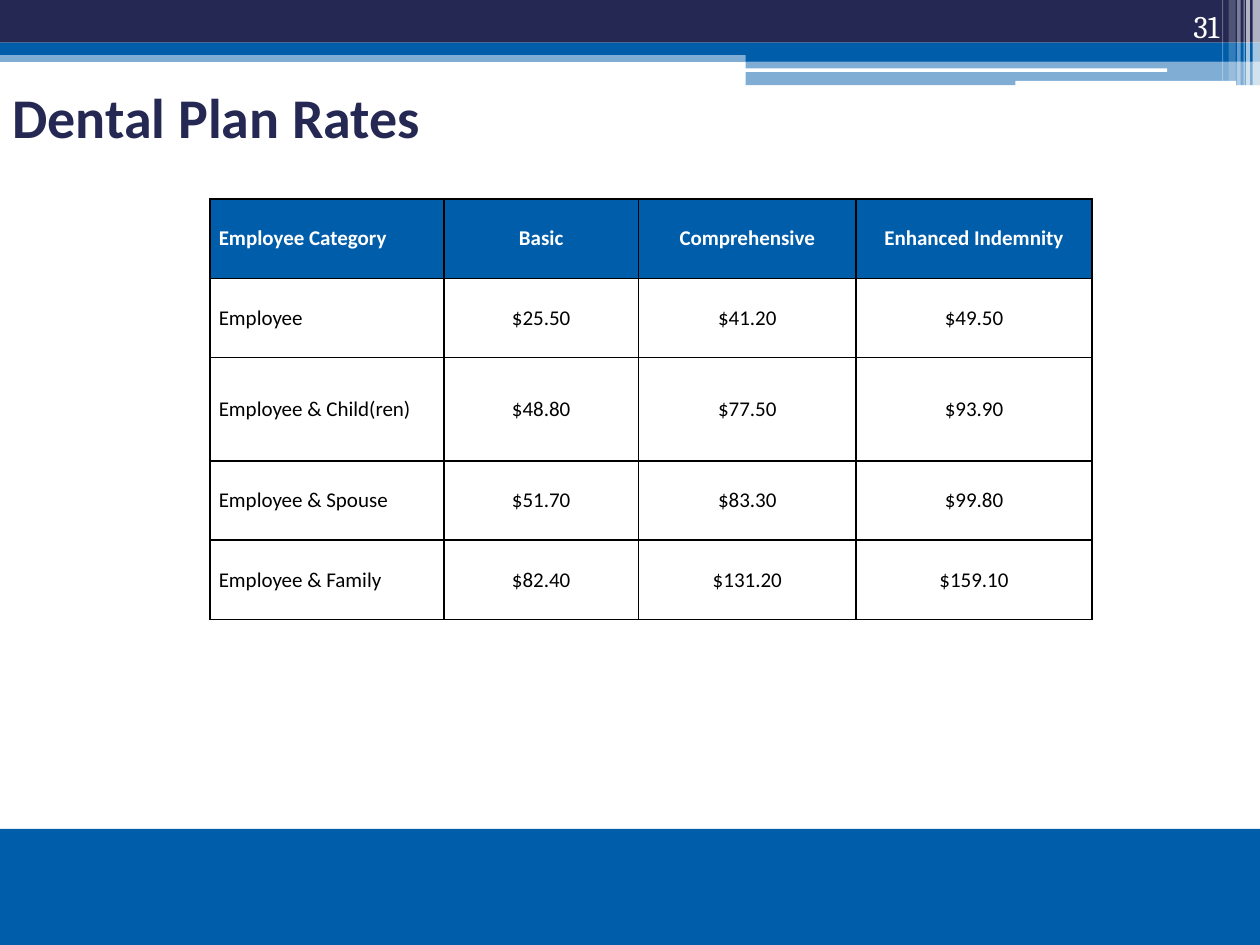
from lxml import etree
from pptx import Presentation
from pptx import util as u
from pptx.dml.color import RGBColor
from pptx.enum import shapes, text
from pptx.oxml import ns

COLORS = {"navy": "242852", "blue": "005DAA", "white": "FFFFFF", "black": "000000"}
RECT = shapes.MSO_SHAPE.RECTANGLE
ROUNDED = shapes.MSO_SHAPE.ROUNDED_RECTANGLE
LEFT, CENTER, RIGHT = text.PP_ALIGN.LEFT, text.PP_ALIGN.CENTER, text.PP_ALIGN.RIGHT
MIDDLE, BOTTOM = text.MSO_ANCHOR.MIDDLE, text.MSO_ANCHOR.BOTTOM


class SlideBuilder:
    """Holds the text style and the current slide; lengths are in centimetres."""

    def __init__(self, slide, font="Calibri"):
        self.slide = slide
        self.font = font

    def color(self, name):
        return RGBColor.from_string(COLORS[name])

    def bar(self, left, top, width, height, color, opacity=100, kind=RECT):
        shape = self.slide.shapes.add_shape(
            kind, u.Cm(left), u.Cm(top), u.Cm(width), u.Cm(height))
        shape.shadow.inherit = False
        shape.line.fill.background()
        shape.fill.solid()
        shape.fill.fore_color.rgb = self.color(color)
        if opacity < 100:
            fill_color = shape.element.spPr.find(".//" + ns.qn("a:srgbClr"))
            etree.SubElement(fill_color, ns.qn("a:alpha"), val=str(opacity * 1000))

    def set_text(self, frame, content, size, color, bold=False, align=LEFT, font=None):
        frame.text = content
        paragraph = frame.paragraphs[0]
        paragraph.alignment = align
        run_font = paragraph.runs[0].font
        run_font.name = font or self.font
        run_font.size = u.Pt(size)
        run_font.bold = bold
        run_font.color.rgb = self.color(color)

    def label(self, left, top, width, height, content, size, color, anchor, **style):
        box = self.slide.shapes.add_textbox(
            u.Cm(left), u.Cm(top), u.Cm(width), u.Cm(height))
        box.text_frame.word_wrap = True
        box.text_frame.vertical_anchor = anchor
        self.set_text(box.text_frame, content, size, color, **style)

    def border(self, cell, color="black", width=1):
        properties = cell._tc.get_or_add_tcPr()
        for side in ("lnL", "lnR", "lnT", "lnB"):
            line = etree.SubElement(properties, ns.qn("a:" + side), w=str(u.Pt(width)))
            fill = etree.SubElement(line, ns.qn("a:solidFill"))
            etree.SubElement(fill, ns.qn("a:srgbClr"), val=COLORS[color])

    def table(self, left, top, widths, heights, rows):
        table = self.slide.shapes.add_table(
            len(rows), len(widths), u.Cm(left), u.Cm(top),
            u.Cm(sum(widths)), u.Cm(sum(heights))).table
        table.horz_banding = False
        for column, width in zip(table.columns, widths):
            column.width = u.Cm(width)
        for row, height in zip(table.rows, heights):
            row.height = u.Cm(height)
        for i, values in enumerate(rows):
            header = i == 0
            for j, value in enumerate(values):
                cell = table.cell(i, j)
                cell.vertical_anchor = MIDDLE
                cell.margin_left = cell.margin_right = u.Cm(0.18)
                cell.margin_top = cell.margin_bottom = 0
                self.border(cell)
                if header:
                    cell.fill.solid()
                    cell.fill.fore_color.rgb = self.color("blue")
                else:
                    cell.fill.background()
                self.set_text(cell.text_frame, value, 12, "white" if header else "black",
                              bold=header, align=CENTER if j else LEFT)


def main():
    presentation = Presentation()
    presentation.slide_width, presentation.slide_height = u.Cm(25.4), u.Cm(19.05)
    builder = SlideBuilder(presentation.slides.add_slide(presentation.slide_layouts[6]))

    # Header bands
    builder.bar(0, 1.02, 25.4, 0.23, "blue", 50)
    builder.bar(0, 0, 25.4, 0.86, "navy")
    builder.bar(0, 0.86, 25.4, 0.25, "blue")
    builder.bar(15.03, 0.99, 10.37, 0.25, "blue")
    builder.bar(15.03, 1.22, 10.37, 0.5, "blue", 50)
    builder.bar(15.02, 1.38, 8.51, 0.07, "white", kind=ROUNDED)
    builder.bar(20.47, 1.63, 4.45, 0.1, "white", kind=ROUNDED)

    # Translucent stripes in the corner: left, width, height, opacity
    stripes = [
        (25.25, 0.15, 1.73, 65), (25.12, 0.08, 1.73, 65), (25.07, 0.02, 1.73, 60),
        (24.94, 0.07, 1.73, 40), (24.77, 0.14, 1.63, 20), (24.64, 0.02, 1.63, 30),
    ]
    for left, width, height, opacity in stripes:
        builder.bar(left, 0, width, height, "white", opacity)

    # Footer band
    builder.bar(0, 16.71, 25.4, 2.34, "blue")

    # Title
    builder.label(0, 1.7, 20.88, 1.27, "Dental Plan Rates", 32, "navy", MIDDLE, bold=True)

    # Rates
    builder.table(4.23, 4.01, [4.72, 3.92, 4.39, 4.75], [1.6, 1.6, 2.08, 1.6, 1.6], [
        ("Employee Category", "Basic", "Comprehensive", "Enhanced Indemnity"),
        ("Employee", "$25.50", "$41.20", "$49.50"),
        ("Employee & Child(ren)", "$48.80", "$77.50", "$93.90"),
        ("Employee & Spouse", "$51.70", "$83.30", "$99.80"),
        ("Employee & Family", "$82.40", "$131.20", "$159.10"),
    ])

    # Slide number
    builder.label(22.71, 0, 2.12, 1.02, "31", 18, "white", BOTTOM,
                  align=RIGHT, font="Cambria")

    presentation.save("out.pptx")


if __name__ == "__main__":
    main()
